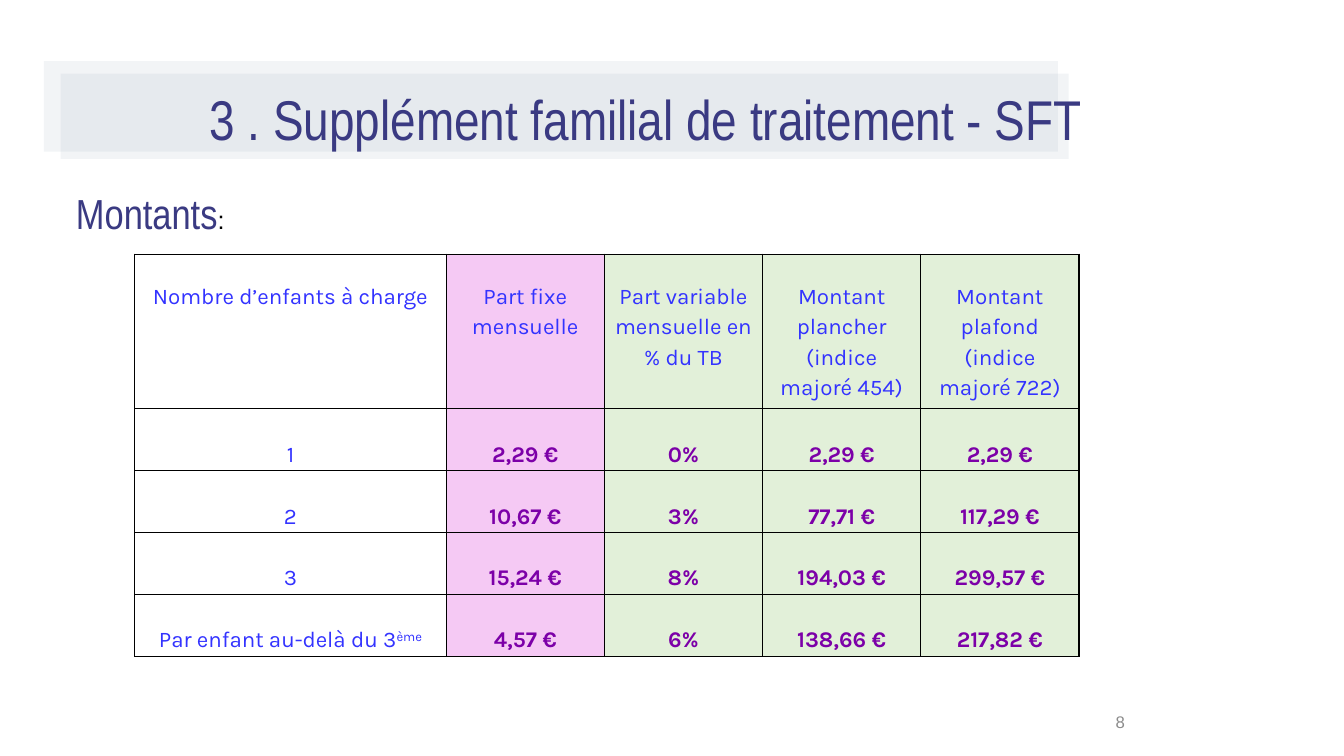
from dataclasses import dataclass

from lxml import etree
from pptx import Presentation
from pptx import util as u
from pptx.dml.color import RGBColor
from pptx.enum import shapes, text
from pptx.oxml.ns import qn

Pt = u.Pt
HUES = {
    "band": "8497B0", "navy": "3A3A82", "black": "000000", "grey": "8C8C8C",
    "blue": "3333FF", "plum": "7C00A8", "pink": "F5C9F4", "green": "E2F0D9",
}


@dataclass(frozen=True)
class Box:
    left: float
    top: float
    width: float
    height: float

    def pts(self) -> tuple:
        return Pt(self.left), Pt(self.top), Pt(self.width), Pt(self.height)


@dataclass(frozen=True)
class Column:
    width: float
    fill: str
    head: str
    rows: tuple


BANDS = (Box(31.4, 43.7, 724.3, 64.6), Box(43.4, 52.6, 720, 61))
TITLE = Box(47.2, 35.1, 828, 104.4)
LABEL = Box(47.2, 130.3, 332.6, 43.9)
NUMBER = Box(594.7, 501.1, 216, 28.8)
GRID = Box(96.2, 181.6, 674.5, 287.2)
HEAD, ROW = 110.4, 44.2
LEAD = 18.8  # room above the text of a table cell

COLUMNS = (
    Column(222.5, "", "Nombre d’enfants à charge",
           ("1", "2", "3", "Par enfant au-delà du 3^ème")),
    Column(113, "pink", "Part fixe mensuelle",
           ("2,29 €", "10,67 €", "15,24 €", "4,57 €")),
    Column(113, "green", "Part variable mensuelle en % du TB",
           ("0%", "3%", "8%", "6%")),
    Column(113, "green", "Montant plancher (indice majoré 454)",
           ("2,29 €", "77,71 €", "194,03 €", "138,66 €")),
    Column(113, "green", "Montant plafond (indice majoré 722)",
           ("2,29 €", "117,29 €", "299,57 €", "217,82 €")),
)


def rgb(hue: str) -> RGBColor:
    return RGBColor.from_string(HUES[hue])


def style(font, face: str, size: float, hue: str, bold: bool = False) -> None:
    font.name, font.size, font.bold = face, Pt(size), bold
    font.color.rgb = rgb(hue)


def add_band(slide, box: Box) -> None:
    band = slide.shapes.add_shape(shapes.MSO_SHAPE.RECTANGLE, *box.pts())
    band.shadow.inherit = False
    band.fill.solid()
    band.fill.fore_color.rgb = rgb("band")
    band.line.fill.background()
    tint = band.element.spPr.find(qn("a:solidFill"))[0]
    etree.SubElement(tint, qn("a:alpha"), val="10000")


def set_title(slide) -> None:
    title = slide.shapes.title
    title.left, title.top, title.width, title.height = TITLE.pts()
    # Bring the title in front of the bands
    title.element.getparent().append(title.element)
    frame = title.text_frame
    frame.auto_size = text.MSO_AUTO_SIZE.NONE
    frame.vertical_anchor = text.MSO_ANCHOR.MIDDLE
    para = frame.paragraphs[0]
    para.text = "3 . Supplément familial de traitement - SFT"
    para.alignment = text.PP_ALIGN.CENTER
    para.line_spacing = 0.9
    style(para.font, "Arial Narrow", 40, "navy")


def add_box(slide, box: Box):
    frame = slide.shapes.add_textbox(*box.pts()).text_frame
    frame.word_wrap = True
    return frame


def add_label(slide) -> None:
    para = add_box(slide, LABEL).paragraphs[0]
    for word, face, size, hue in (
        ("Montants", "Arial Narrow", 30, "navy"),
        (":", "Arial", 18, "black"),
    ):
        run = para.add_run()
        run.text = word
        style(run.font, face, size, hue)


def add_number(slide) -> None:
    frame = add_box(slide, NUMBER)
    frame.vertical_anchor = text.MSO_ANCHOR.MIDDLE
    para = frame.paragraphs[0]
    para.text = "8"
    para.alignment = text.PP_ALIGN.RIGHT
    style(para.font, "Arial", 12, "grey")


def add_rules(cell) -> None:
    """Draw a thin black border on all four sides of the cell."""
    props = cell._tc.get_or_add_tcPr()
    for side in ("lnL", "lnR", "lnT", "lnB"):
        rule = etree.SubElement(props, qn(f"a:{side}"), w=str(Pt(1)))
        fill = etree.SubElement(rule, qn("a:solidFill"))
        etree.SubElement(fill, qn("a:srgbClr"), val=HUES["black"])


def fill_cell(cell, words: str, fill: str, hue: str, bold: bool) -> None:
    """Write the words; what follows a caret is raised."""
    add_rules(cell)
    if fill:
        cell.fill.solid()
        cell.fill.fore_color.rgb = rgb(fill)
    else:
        cell.fill.background()
    cell.margin_left = cell.margin_right = Pt(5.4)
    cell.margin_top, cell.margin_bottom = Pt(LEAD), Pt(0)
    para = cell.text_frame.paragraphs[0]
    para.alignment = text.PP_ALIGN.CENTER
    para.line_spacing = 1.15
    style(para.font, "Karla", 16, hue, bold)
    base, _, top = words.partition("^")
    para.add_run().text = base
    if top:
        run = para.add_run()
        run.text = top
        run._r.get_or_add_rPr().set("baseline", "30000")


def add_grid(slide) -> None:
    count = len(COLUMNS[0].rows) + 1
    table = slide.shapes.add_table(count, len(COLUMNS), *GRID.pts()).table
    table.first_row = table.horz_banding = False
    for i, row in enumerate(table.rows):
        row.height = Pt(ROW if i else HEAD)
    for j, col in enumerate(COLUMNS):
        table.columns[j].width = Pt(col.width)
        for i, words in enumerate((col.head, *col.rows)):
            cell = table.cell(i, j)
            value = i > 0 and j > 0
            fill_cell(cell, words, col.fill, "plum" if value else "blue", value)
            if i:
                cell.vertical_anchor = text.MSO_ANCHOR.MIDDLE


def main() -> None:
    deck = Presentation()
    deck.slide_width, deck.slide_height = Pt(960), Pt(540)
    slide = deck.slides.add_slide(deck.slide_layouts[5])
    for box in BANDS:
        add_band(slide, box)
    set_title(slide)
    add_label(slide)
    add_grid(slide)
    add_number(slide)
    deck.save("out.pptx")


if __name__ == "__main__":
    main()
